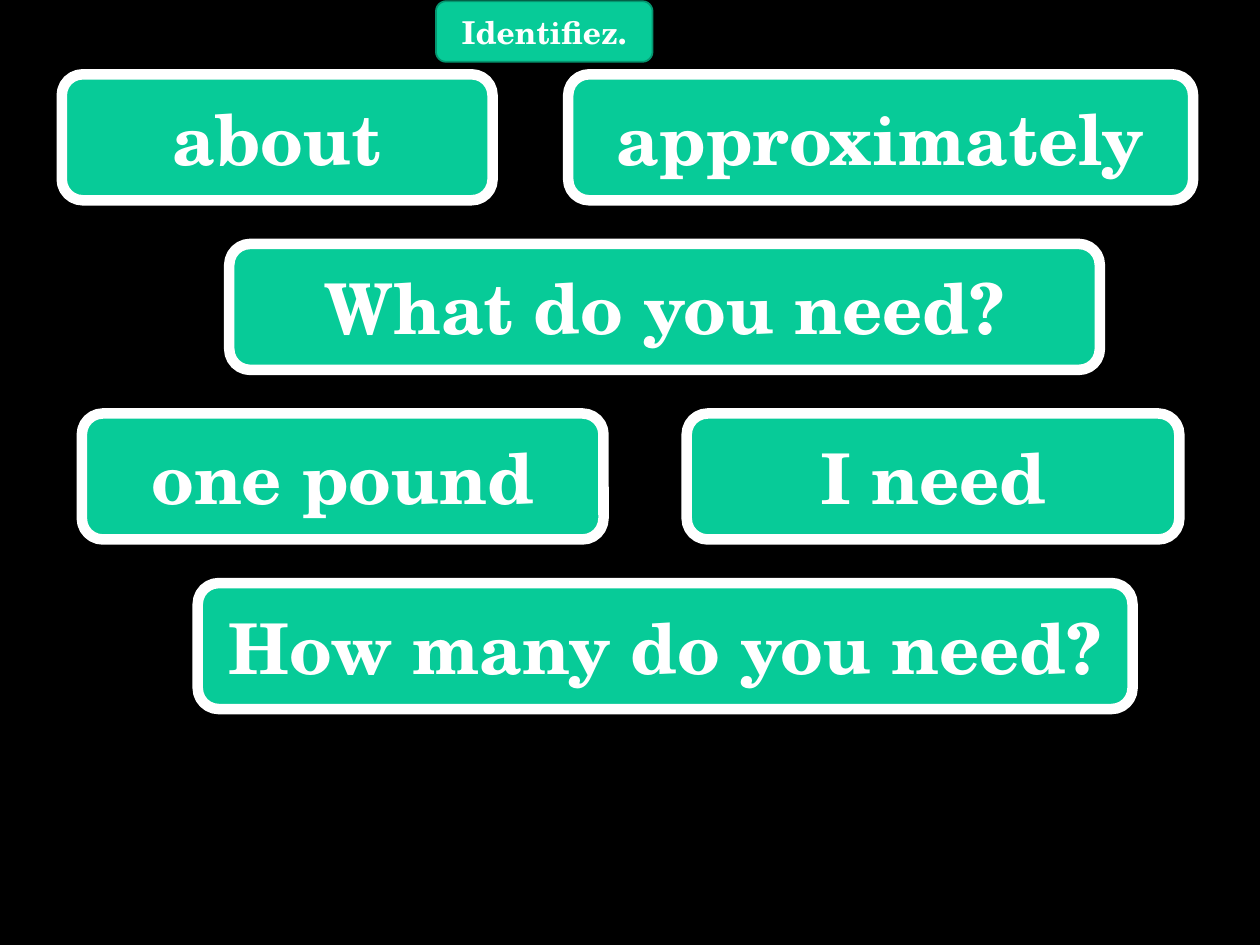
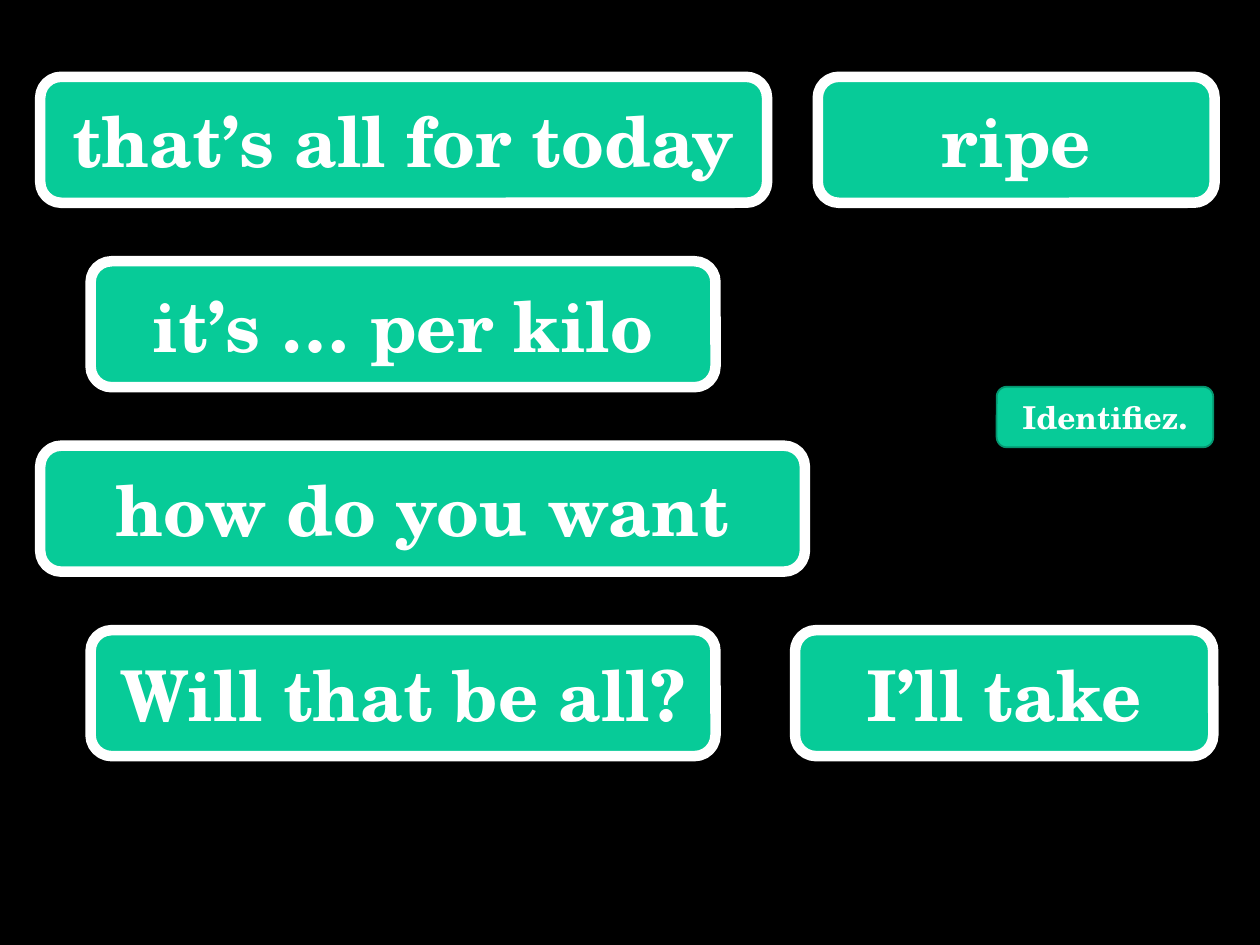
"""Build two slides of French vocabulary cards to identify."""
import pptx
import pptx.util
import pptx.dml.color
import pptx.enum.shapes
import pptx.enum.text

Pt = pptx.util.Pt
FONT = "TeX Gyre Schola"
HUES = {"back": "000000", "card": "07CB98", "edge": "059670", "white": "FFFFFF"}
CARD = {"high": 72, "size": 40, "rim": "white", "weight": 6}
TAG = {"high": 34.6, "size": 18, "rim": "edge", "weight": 1}
TAG_WIDE = 123.8


def hue(name):
    return pptx.dml.color.RGBColor.from_string(HUES[name])


def add_card(slide, text, left, top, wide, style):
    card = slide.shapes.add_shape(
        pptx.enum.shapes.MSO_SHAPE.ROUNDED_RECTANGLE,
        Pt(left), Pt(top), Pt(wide), Pt(style["high"]))
    card.shadow.inherit = False
    card.fill.solid()
    card.fill.fore_color.rgb = hue("card")
    card.line.color.rgb = hue(style["rim"])
    card.line.width = Pt(style["weight"])
    frame = card.text_frame
    frame.word_wrap = True
    frame.vertical_anchor = pptx.enum.text.MSO_ANCHOR.MIDDLE
    para = frame.paragraphs[0]
    para.alignment = pptx.enum.text.PP_ALIGN.CENTER
    run = para.add_run()
    run.text = text
    run.font.name = FONT
    run.font.size = Pt(style["size"])
    run.font.bold = True
    run.font.color.rgb = hue("white")


pages = [
    {"top": 42.5, "step": 96.9, "tag": (249.1, 0.7), "rows": [
        [("about", 35.3, 246.2), ("approximately", 324.7, 357.1)],
        [("What do you need?", 131, 497.5)],
        [("one pound", 46.8, 298.1), ("I need", 392.4, 281.5)],
        [("How many do you need?", 113, 534.2)],
    ]},
    {"top": 43.9, "step": 105.4, "tag": (569.5, 221), "rows": [
        [("that’s all for today", 23, 415.4), ("ripe", 467.3, 226.8)],
        [("it’s … per kilo", 51.8, 357.1)],
        [("how do you want", 23, 437)],
        [("Will that be all?", 51.8, 357.1), ("I’ll take", 454.3, 239)],
    ]},
]

deck = pptx.Presentation()
deck.slide_width = Pt(720)
deck.slide_height = Pt(540)

for page in pages:
    slide = deck.slides.add_slide(deck.slide_layouts[6])
    slide.background.fill.solid()
    slide.background.fill.fore_color.rgb = hue("back")
    for index, row in enumerate(page["rows"]):
        top = page["top"] + index * page["step"]
        for text, left, wide in row:
            add_card(slide, text, left, top, wide, CARD)
    add_card(slide, "Identifiez.", *page["tag"], TAG_WIDE, TAG)

deck.save("out.pptx")
